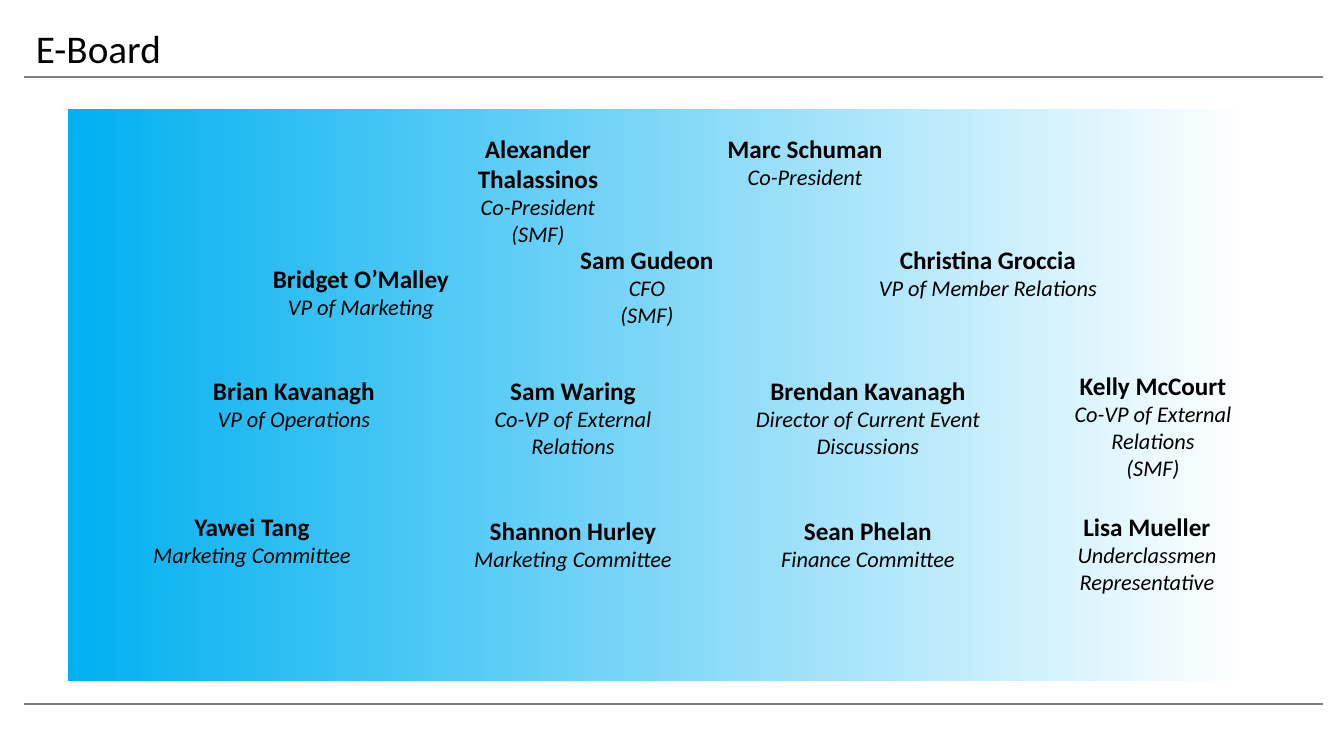
import pptx
import pptx.util
import pptx.dml.color
import pptx.enum.shapes
import pptx.enum.text
from lxml import etree

TITLE = "E-Board"
# centre x, top, width, height (px), name, role lines
MEMBERS = [
    (538, 128, 248, 99, "Alexander Thalassinos", ["Co-President", "(SMF)"]),
    (805, 128, 252, 68, "Marc Schuman", ["Co-President"]),
    (361, 258, 252, 68, "Bridget O’Malley", ["VP of Marketing"]),
    (647, 239, 252, 126, "Sam Gudeon", ["CFO", "(SMF)"]),
    (988, 239, 252, 68, "Christina Groccia", ["VP of Member Relations"]),
    (294, 370, 252, 68, "Brian Kavanagh", ["VP of Operations"]),
    (573, 370, 252, 126, "Sam Waring", ["Co-VP of External Relations"]),
    (868, 370, 252, 95, "Brendan Kavanagh", ["Director of Current Event Discussions"]),
    (1153, 365, 252, 122, "Kelly McCourt", ["Co-VP of External Relations", "(SMF)"]),
    (252, 506, 252, 68, "Yawei Tang", ["Marketing Committee"]),
    (573, 510, 252, 68, "Shannon Hurley", ["Marketing Committee"]),
    (868, 510, 252, 68, "Sean Phelan", ["Finance Committee"]),
    (1147, 506, 263, 95, "Lisa Mueller", ["Underclassmen Representative"]),
]
RULE_LEFT, RULE_RIGHT = 24, 1323
RULE_TOPS = [77, 704]

BLACK = pptx.dml.color.RGBColor(0x00, 0x00, 0x00)
GREY = pptx.dml.color.RGBColor(0x80, 0x80, 0x80)
SKY = pptx.dml.color.RGBColor(0x00, 0xB0, 0xF0)
WHITE = pptx.dml.color.RGBColor(0xFF, 0xFF, 0xFF)
FONT = "Calibri"
PX_PER_INCH = 100.8


def px(n):
    return pptx.util.Inches(n / PX_PER_INCH)


def add_text(s, left, top, width, height, lines, align=None):
    """Add a text box; lines holds (text, size, bold, italic) tuples."""
    box = s.shapes.add_textbox(px(left), px(top), px(width), px(height))
    tf = box.text_frame
    tf.word_wrap = True
    tf.text = "\n".join(line[0] for line in lines)
    for p, (_, size, bold, italic) in zip(tf.paragraphs, lines):
        p.alignment = align
        font = p.runs[0].font
        font.name = FONT
        font.size = pptx.util.Pt(size)
        font.bold = bold
        font.italic = italic
        font.color.rgb = BLACK


def add_panel(s):
    rect = pptx.enum.shapes.MSO_SHAPE.RECTANGLE
    sp = s.shapes.add_shape(rect, px(68), px(109), px(1182), px(572))
    sp.shadow.inherit = False
    sp.line.fill.background()
    sp.fill.gradient()
    sp.fill.gradient_angle = 0
    for stop, color, position in zip(sp.fill.gradient_stops, (SKY, WHITE), (0, 1)):
        stop.color.rgb = color
        stop.position = position


def add_rule(s, y):
    straight = pptx.enum.shapes.MSO_CONNECTOR.STRAIGHT
    rule = s.shapes.add_connector(straight, px(RULE_LEFT), px(y), px(RULE_RIGHT), px(y))
    rule.line.color.rgb = GREY
    rule.line.width = pptx.util.Pt(1.5)
    etree.SubElement(rule._element.spPr, pptx.oxml.ns.qn("a:effectLst"))


def main():
    prs = pptx.Presentation()
    prs.slide_width, prs.slide_height = px(1344), px(756)
    s = prs.slides.add_slide(prs.slide_layouts[6])
    add_panel(s)
    add_text(s, 26, 19, 1294, 57, [(TITLE, 28, False, False)])
    for center, top, width, height, name, roles in MEMBERS:
        lines = [(name, 18, True, False)] + [(role, 16, False, True) for role in roles]
        add_text(s, center - width / 2, top, width, height, lines,
                 pptx.enum.text.PP_ALIGN.CENTER)
    for y in RULE_TOPS:
        add_rule(s, y)
    prs.save("out.pptx")


if __name__ == "__main__":
    main()
